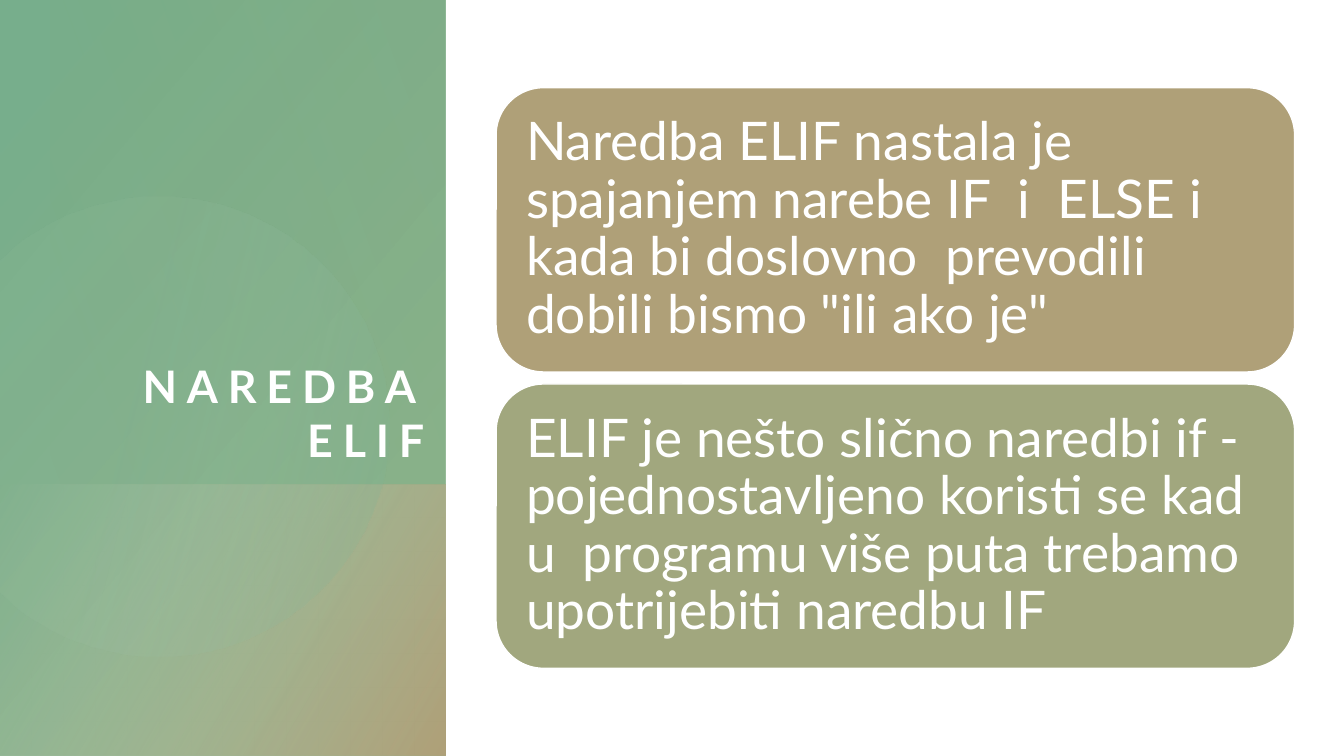
from math import acos, cos, sin
from lxml.etree import SubElement
from pptx import Presentation
from pptx.dml.color import RGBColor as Rgb
from pptx.enum.shapes import MSO_SHAPE as Kind
from pptx.enum.text import MSO_ANCHOR as Anchor, MSO_AUTO_SIZE as Auto, PP_ALIGN as Align
from pptx.oxml.ns import qn
from pptx.util import Pt

PX = 9144
THEME = {
    "font": "Lato", "white": "FFFFFF", "sand": "AFA078", "olive": "A1A77E",
    "sea": "77AE8C", "leaf": "83AC81", "moss": "8DAA74", "mint": "ADCEBA", "pale": "B5CDB3",
    "title": 32, "card": 38, "track": 700,
}


def tint(shape, stops, angle):
    shape.shadow.inherit = False
    shape.line.fill.background()
    fill = shape.fill
    fill.gradient()
    fill.gradient_angle = (360 - angle) % 360
    for stop, (place, name, _) in zip(fill.gradient_stops, stops):
        stop.position = place / 100
        stop.color.rgb = Rgb.from_string(THEME[name])
    marks = shape._element.spPr.iter(qn("a:srgbClr"))
    for mark, (_, _, alpha) in zip(marks, stops):
        SubElement(mark, qn("a:alpha")).set("val", str(alpha * 1000))


def write(para, text, size, bold=False):
    run = para.add_run()
    run.text = text
    run.font.name = THEME["font"]
    run.font.size = Pt(THEME[size])
    run.font.bold = bold
    run.font.color.rgb = Rgb.from_string(THEME["white"])
    return run


deck = Presentation()
deck.slide_width, deck.slide_height = 1333 * PX, 750 * PX
slide = deck.slides.add_slide(deck.slide_layouts[5])
shapes = slide.shapes

panels = [
    ((0, 0, 442, 750), [(8, "sea", 100), (100, "leaf", 89)], 40),
    ((0, 481, 442, 269), [(0, "pale", 0), (99, "sand", 100)], 30),
    ((50, 0, 392, 481), [(0, "leaf", 29), (100, "moss", 0)], 160),
]
for box, stops, angle in panels:
    panel = shapes.add_shape(Kind.RECTANGLE, *[n * PX for n in box])
    tint(panel, stops, angle)

mid, high, rad, steps = 158, 423, 228, 120
reach = acos(-mid / rad)
turns = [reach * (2 * i / steps - 1) for i in range(steps + 1)]
rim = [(round(mid + rad * cos(t)), round(high + rad * sin(t))) for t in turns]
path = shapes.build_freeform(*rim[0], scale=PX)
path.add_line_segments(rim[1:], close=True)
disc = path.convert_to_shape()
tint(disc, [(36, "mint", 6), (100, "sea", 26)], 14)

title = shapes.title
title.left, title.top, title.width, title.height = [n * PX for n in (50, 95, 371, 368)]
shapes._spTree.append(title._element)
frame = title.text_frame
frame.word_wrap = True
frame.auto_size = Auto.NONE
frame.vertical_anchor = Anchor.BOTTOM
frame.margin_left = frame.margin_right = frame.margin_top = frame.margin_bottom = 0
para = frame.paragraphs[0]
para.alignment = Align.RIGHT
run = write(para, "NAREDBA ELIF", "title", True)
run._r.get_or_add_rPr().set("spc", str(THEME["track"]))

cards = [
    ("sand", "Naredba ELIF nastala je spajanjem narebe IF  i  ELSE i kada bi doslovno  prevodili dobili bismo \"ili ako je\""),
    ("olive", "ELIF je nešto slično naredbi if - pojednostavljeno koristi se kad u  programu više puta trebamo upotrijebiti naredbu IF"),
]
for row, (tone, text) in enumerate(cards):
    card = shapes.add_shape(Kind.ROUNDED_RECTANGLE, 492 * PX, (87 + 294 * row) * PX, 792 * PX, 282 * PX)
    card.shadow.inherit = False
    card.fill.solid()
    card.fill.fore_color.rgb = Rgb.from_string(THEME[tone])
    card.line.color.rgb = Rgb.from_string(THEME["white"])
    card.line.width = Pt(1)
    frame = card.text_frame
    frame.word_wrap = True
    frame.vertical_anchor = Anchor.MIDDLE
    frame.margin_left = frame.margin_right = frame.margin_top = frame.margin_bottom = 16 * PX
    para = frame.paragraphs[0]
    para.alignment = Align.LEFT
    para.line_spacing = 0.9
    write(para, text, "card")

deck.save("out.pptx")
